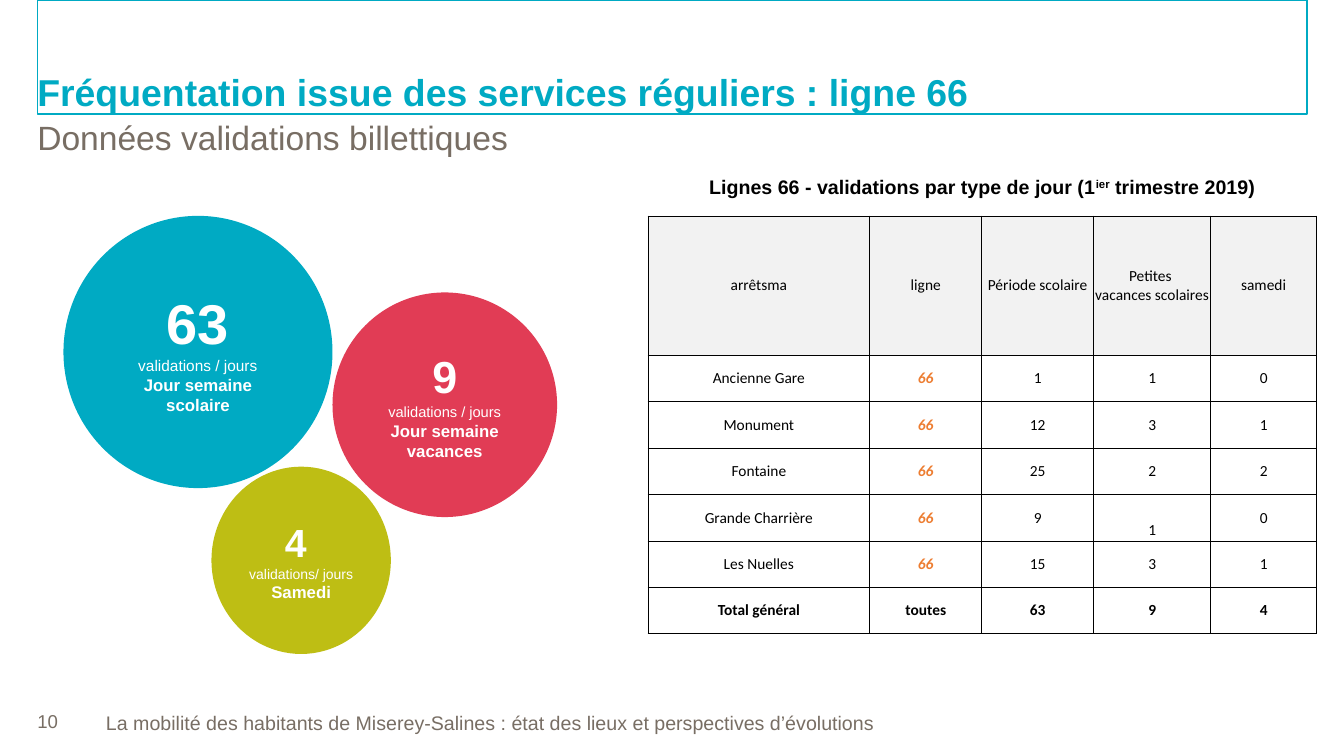
from lxml.etree import SubElement
from pptx import Presentation
from pptx.dml.color import RGBColor
from pptx.enum.shapes import MSO_SHAPE as Shape
from pptx.enum.text import MSO_ANCHOR as Anchor, PP_ALIGN as Align
from pptx.oxml.ns import qn
from pptx.util import Cm, Pt

TEAL = RGBColor(0x00, 0xAA, 0xC3)
RED = RGBColor(0xE1, 0x3C, 0x55)
OLIVE = RGBColor(0xBE, 0xBE, 0x14)
TAUPE = RGBColor(0x78, 0x6E, 0x64)
ORANGE = RGBColor(0xED, 0x7D, 0x31)
HEADER_GREY = RGBColor(0xF2, 0xF2, 0xF2)
BLACK = RGBColor(0, 0, 0)
WHITE = RGBColor(0xFF, 0xFF, 0xFF)

BUBBLES = [
    ((1.6, 5.44, 6.78, 6.86), TEAL,
     "63\vvalidations / jours\nJour semaine scolaire", (40, 11)),
    ((8.38, 7.37, 5.66, 5.66), RED,
     "9\vvalidations / jours\nJour semaine vacances", (32, 10.5)),
    ((5.33, 11.76, 4.52, 4.72), OLIVE,
     "4 \vvalidations/ jours\nSamedi", (28, 10)),
]
HEADINGS = ["arrêtsma", "ligne", "Période scolaire",
            "Petites \vvacances scolaires", "samedi"]
STOPS = [
    ("Ancienne Gare", 1, 1, 0),
    ("Monument", 12, 3, 1),
    ("Fontaine", 25, 2, 2),
    ("Grande Charrière", 9, 1, 0),
    ("Les Nuelles", 15, 3, 1),
]
TOTALS = ["Total général", "toutes", 63, 9, 4]
COLUMN_WIDTHS = [5.59, 2.82, 2.82, 2.95, 2.67]
HEADING_HEIGHT, STOP_HEIGHT = 3.51, 1.17


class SlideBuilder:
    font = "Arial"
    table_font = "Calibri"
    table_size = 11

    def __init__(self, presentation):
        self.slide = presentation.slides.add_slide(presentation.slide_layouts[6])

    def style(self, run, size, color, bold=False, italic=False, font=None):
        run.font.name = font or self.font
        run.font.size = Pt(size)
        run.font.color.rgb = color
        run.font.bold = bold
        run.font.italic = italic

    def set_margins(self, frame, margin=0):
        frame.margin_left = frame.margin_right = Cm(margin)
        frame.margin_top = frame.margin_bottom = Cm(margin)

    def text(self, box, wording, size, color, anchor=Anchor.TOP):
        frame = self.slide.shapes.add_textbox(*map(Cm, box)).text_frame
        frame.word_wrap = True
        frame.vertical_anchor = anchor
        self.set_margins(frame)
        frame.text = wording
        self.style(frame.paragraphs[0].runs[0], size, color)

    def title(self, box, wording, size, color):
        banner = self.slide.shapes.add_shape(Shape.RECTANGLE, *map(Cm, box))
        banner.shadow.inherit = False
        banner.fill.background()
        banner.line.color.rgb = color
        banner.line.width = Pt(1)
        frame = banner.text_frame
        frame.word_wrap = True
        frame.vertical_anchor = Anchor.BOTTOM
        self.set_margins(frame)
        frame.text = wording
        frame.paragraphs[0].alignment = Align.LEFT
        self.style(frame.paragraphs[0].runs[0], size, color, bold=True)

    def caption(self, box, parts, size):
        frame = self.slide.shapes.add_textbox(*map(Cm, box)).text_frame
        frame.word_wrap = True
        paragraph = frame.paragraphs[0]
        paragraph.alignment = Align.CENTER
        for wording, raised in parts:
            run = paragraph.add_run()
            run.text = wording
            self.style(run, size, BLACK, bold=True)
            if raised:
                run.font._element.set("baseline", "30000")

    def bubble(self, box, color, wording, sizes):
        circle = self.slide.shapes.add_shape(Shape.OVAL, *map(Cm, box))
        circle.shadow.inherit = False
        circle.fill.solid()
        circle.fill.fore_color.rgb = color
        circle.line.fill.background()
        frame = circle.text_frame
        frame.word_wrap = True
        frame.vertical_anchor = Anchor.MIDDLE
        frame.text = wording
        count, day_type = frame.paragraphs
        count.alignment = day_type.alignment = Align.CENTER
        figure, unit = count.runs
        self.style(figure, sizes[0], WHITE, bold=True)
        self.style(unit, sizes[1], WHITE)
        self.style(day_type.runs[0], 12, WHITE, bold=True)

    def border(self, cell):
        properties = cell._tc.get_or_add_tcPr()
        for side in ("lnL", "lnR", "lnT", "lnB"):
            line = SubElement(properties, qn(f"a:{side}"), w=str(Pt(0.5)))
            fill = SubElement(line, qn("a:solidFill"))
            SubElement(fill, qn("a:srgbClr"), val=str(BLACK))

    def cell(self, cell, wording, color=BLACK, bold=False, italic=False, fill=None):
        self.border(cell)
        if fill is None:
            cell.fill.background()
        else:
            cell.fill.solid()
            cell.fill.fore_color.rgb = fill
        self.set_margins(cell, 0.02)
        cell.vertical_anchor = Anchor.MIDDLE
        cell.text_frame.text = str(wording)
        paragraph = cell.text_frame.paragraphs[0]
        paragraph.alignment = Align.CENTER
        for run in paragraph.runs:
            self.style(run, self.table_size, color, bold, italic, self.table_font)

    def validations_table(self, left, top):
        rows = [HEADINGS]
        rows += [(stop, 66, *counts) for stop, *counts in STOPS]
        rows.append(TOTALS)
        heights = [HEADING_HEIGHT] + [STOP_HEIGHT] * (len(rows) - 1)
        table = self.slide.shapes.add_table(
            len(rows), len(COLUMN_WIDTHS), Cm(left), Cm(top),
            Cm(sum(COLUMN_WIDTHS)), Cm(sum(heights))).table
        table.first_row = table.horz_banding = False
        for column, width in zip(table.columns, COLUMN_WIDTHS):
            column.width = Cm(width)
        for r, (values, height) in enumerate(zip(rows, heights)):
            table.rows[r].height = Cm(height)
            for c, value in enumerate(values):
                is_line = value == 66
                self.cell(table.cell(r, c), value,
                          color=ORANGE if is_line else BLACK,
                          bold=is_line or values is TOTALS,
                          italic=is_line,
                          fill=HEADER_GREY if values is HEADINGS else None)
        table.cell(4, 3).vertical_anchor = Anchor.BOTTOM


def main():
    presentation = Presentation()
    presentation.slide_width = Cm(33.87)
    presentation.slide_height = Cm(19.05)
    builder = SlideBuilder(presentation)
    builder.title((0.94, 0, 32, 2.87),
                  "Fréquentation issue des services réguliers : ligne 66", 26.7, TEAL)
    builder.text((0.94, 17.32, 1.32, 1.7), "10", 13.3, TAUPE, Anchor.MIDDLE)
    for bubble in BUBBLES:
        builder.bubble(*bubble)
    builder.text((0.94, 2.95, 32, 1.35), "Données validations billettiques", 24, TAUPE)
    builder.text((2.67, 17.35, 24, 1.7),
                 "La mobilité des habitants de Miserey-Salines : "
                 "état des lieux et perspectives d’évolutions", 14, TAUPE, Anchor.MIDDLE)
    builder.caption((16.33, 4.29, 16.84, 0.86),
                    [("Lignes 66 - validations par type de jour (1", False),
                     ("ier", True), (" trimestre 2019)", False)], 14)
    builder.validations_table(16.33, 5.44)
    presentation.save("out.pptx")


if __name__ == "__main__":
    main()
